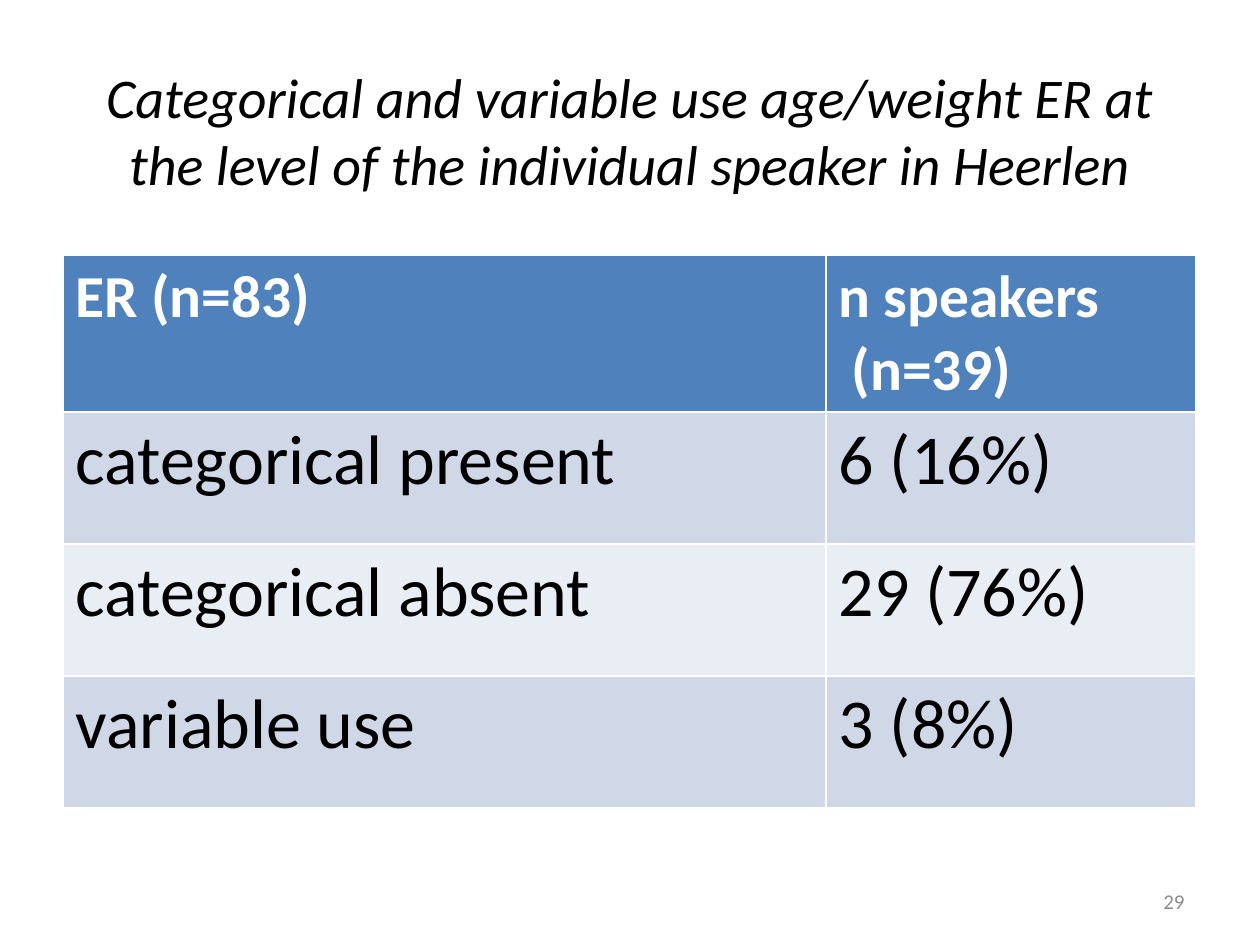
"""Builds the slide on categorical and variable ER use by speaker."""
from pptx import Presentation
from pptx import util as u
from pptx.dml.color import RGBColor
from pptx.enum import text

TITLE = ("Categorical and variable use age/weight ER at "
         "the level of the individual speaker in Heerlen")
ROWS = [
    ("ER (n=83)", "n speakers\n (n=39)"),
    ("categorical present", "6 (16%)"),
    ("categorical absent", "29 (76%)"),
    ("variable use", "3 (8%)"),
]
PAGE = "29"
HUES = {"head": "4F81BD", "odd": "D0D8E8", "even": "E9EDF4",
        "white": "FFFFFF", "black": "000000", "gray": "8C8C8C"}
WIDTHS = (763, 370)
HEIGHTS = (157, 132, 132, 132)
FONT = "Calibri"


def px(n):
    return u.Emu(n * 914400 // 126)


def style(frame, size, hue, **looks):
    for par in frame.paragraphs:
        font = par.font
        font.name, font.size = FONT, u.Pt(size)
        font.color.rgb = RGBColor.from_string(HUES[hue])
        for key, value in looks.items():
            setattr(font, key, value)


def label(slide, words, box, align, size, hue, **looks):
    frame = slide.shapes.add_textbox(*map(px, box)).text_frame
    frame.word_wrap = True
    frame.vertical_anchor = text.MSO_ANCHOR.MIDDLE
    frame.text = words
    frame.paragraphs[0].alignment = align
    style(frame, size, hue, **looks)


def grid(slide):
    table = slide.shapes.add_table(
        len(ROWS), len(WIDTHS), px(63), px(255),
        px(sum(WIDTHS)), px(sum(HEIGHTS))).table
    for col, width in zip(table.columns, WIDTHS):
        col.width = px(width)
    for r, (row, height) in enumerate(zip(ROWS, HEIGHTS)):
        table.rows[r].height = px(height)
        band = "head" if r == 0 else "odd" if r % 2 else "even"
        for c, words in enumerate(row):
            cell = table.cell(r, c)
            cell.text = words
            cell.fill.solid()
            cell.fill.fore_color.rgb = RGBColor.from_string(HUES[band])
            if r == 0:
                style(cell.text_frame, 34, "white", bold=True)
            else:
                style(cell.text_frame, 40, "black", bold=False)


def main():
    deck = Presentation()
    deck.slide_width, deck.slide_height = px(1260), px(945)
    slide = deck.slides.add_slide(deck.slide_layouts[6])
    label(slide, TITLE, (63, 38, 1134, 183), text.PP_ALIGN.CENTER,
          32, "black", italic=True)
    grid(slide)
    label(slide, PAGE, (903, 876, 294, 50), text.PP_ALIGN.RIGHT, 12, "gray")
    deck.save("out.pptx")


if __name__ == "__main__":
    main()
